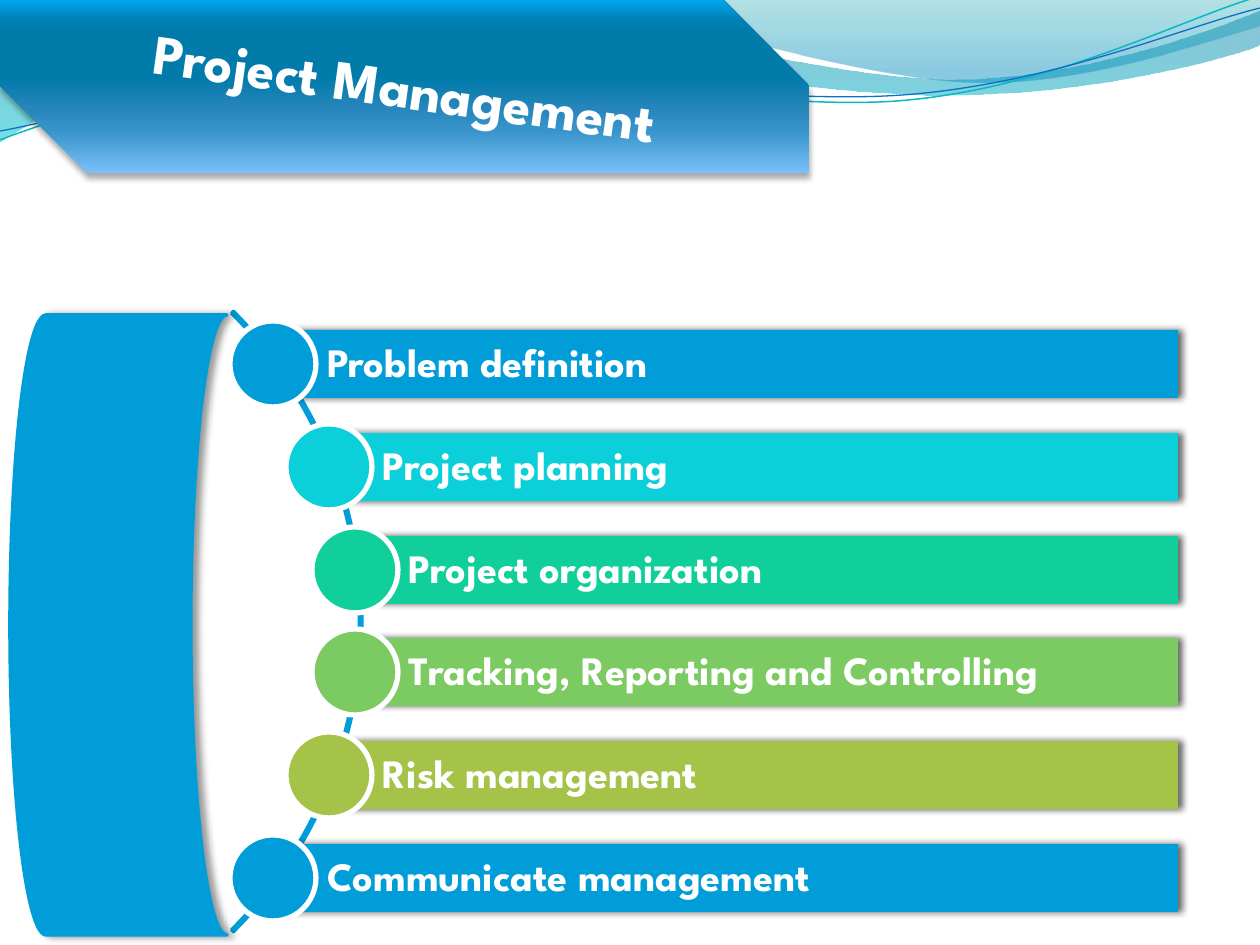
from dataclasses import dataclass
from math import cos, radians, sin

from lxml import etree
from pptx import Presentation
from pptx.dml.color import RGBColor
from pptx.enum.shapes import MSO_SHAPE as SHAPE
from pptx.enum.text import MSO_ANCHOR as ANCHOR, PP_ALIGN as ALIGN
from pptx.oxml.ns import qn
from pptx.util import Pt

PX = 914400 // 126
FONT = "League Spartan"
COLORS = {
    "white": "FFFFFF", "blue": "009DD9", "cyan": "0BD0D9", "green": "10CF9B",
    "leaf": "7CCA62", "olive": "A5C249", "black": "000000",
    "wave_teal": "0AB8BF", "wave_blue": "0F6FC6",
}
BAR_RIGHT, BAR_TOP, BAR_H, CIRCLE = 1178, 330, 68, 86
PITCH = (844 - BAR_TOP) / 5
WAVE_CENTER = (629, 73)


@dataclass(frozen=True)
class Step:
    text: str
    color: str
    x: int


@dataclass(frozen=True)
class Wave:
    start: tuple
    segments: tuple
    stops: tuple = ()
    line: str = ""
    width: float = 0
    tilt: float = 0


@dataclass(frozen=True)
class Shadow:
    alpha: int
    blur: float
    dist: float
    angle: int


STEPS = (
    Step("Problem definition", "blue", 273),
    Step("Project planning", "cyan", 329),
    Step("Project organization", "green", 355),
    Step("Tracking, Reporting and Controlling", "leaf", 355),
    Step("Risk management", "olive", 329),
    Step("Communicate management", "blue", 273),
)
WAVES = (
    Wave((0, 0), (
        (554, -1), (600, 21, 837, 79, 955, 79), (1075, 79, 1207, 33, 1260, 11),
        (1261, 45), (1239, 55, 1096, 96, 940, 95), (784, 95, 481, 35, 324, 43),
        (163, 45, 58, 105, -1, 142), (0, 0)),
        ((0, "0074A1", 45), (100, "00C6CF", 55))),
    Wave((604, -1), (
        (641, 14, 859, 78, 969, 82), (1079, 87, 1211, 40, 1260, 26),
        (1260, 0), (604, -1)),
        ((0, "00A1A9", 30), (80, "008BBF", 45))),
    Wave((0, 140), (
        (60, 117, 199, 72, 349, 66), (498, 59, 747, 112, 898, 101),
        (1050, 89, 1182, 19, 1257, -3)), line="wave_teal", width=0.85, tilt=-2.7),
    Wave((0, 131), (
        (59, 121, 207, 77, 357, 71), (508, 64, 752, 106, 903, 95),
        (1053, 84, 1186, 26, 1260, 8)), line="wave_blue", width=0.75, tilt=-2.7),
)
BANNER_STOPS = (
    (0, "7BC0F9", 100), (25, "3694CA", 100), (38, "2685BA", 100),
    (55, "007BAA", 100), (80, "007AA9", 100), (88, "0080B2", 100),
    (100, "00A7F1", 100),
)


def px(*values: float) -> list[int]:
    return [round(v) * PX for v in values]


def rgb(name: str) -> RGBColor:
    return RGBColor.from_string(COLORS[name])


def apply(target, formats: dict) -> None:
    for name, value in formats.items():
        setattr(target, name, value)


def add_color(parent, value: str, alpha: int) -> None:
    color = etree.SubElement(parent, qn("a:srgbClr"), val=value)
    if alpha < 100:
        etree.SubElement(color, qn("a:alpha"), val=str(alpha * 1000))


def paint(sp, fill: str = "", line: str = "", width: float = 0) -> None:
    sp.shadow.inherit = False
    if fill:
        sp.fill.solid()
        sp.fill.fore_color.rgb = rgb(fill)
    else:
        sp.fill.background()
    if line:
        sp.line.color.rgb = rgb(line)
        sp.line.width = Pt(width)
    else:
        sp.line.fill.background()


def paint_gradient(sp, stops: tuple, angle: int) -> None:
    paint(sp)
    old = sp.element.spPr.find(qn("a:noFill"))
    grad = etree.Element(qn("a:gradFill"), rotWithShape="1")
    stop_list = etree.SubElement(grad, qn("a:gsLst"))
    for pos, value, alpha in stops:
        stop = etree.SubElement(stop_list, qn("a:gs"), pos=str(pos * 1000))
        add_color(stop, value, alpha)
    etree.SubElement(grad, qn("a:lin"), ang=str(angle * 60000), scaled="0")
    sp.element.spPr.replace(old, grad)


def cast_shadow(sp, shadow: Shadow) -> None:
    effects = sp.element.spPr.find(qn("a:effectLst"))
    outer = etree.SubElement(
        effects, qn("a:outerShdw"), blurRad=str(Pt(shadow.blur)),
        dist=str(Pt(shadow.dist)), dir=str(shadow.angle * 60000),
        algn="ctr", rotWithShape="0")
    add_color(outer, COLORS["black"], shadow.alpha)


def write(sp, text: str, size: int, frame: dict, para: dict) -> None:
    tf = sp.text_frame
    apply(tf, {"vertical_anchor": ANCHOR.MIDDLE, "word_wrap": True} | frame)
    p = tf.paragraphs[0]
    apply(p, para)
    r = p.add_run()
    r.text = text
    apply(r.font, {"name": FONT, "size": Pt(size), "bold": True})
    r.font.color.rgb = rgb("white")


def turn(point: tuple, degrees: float) -> tuple:
    cx, cy = WAVE_CENTER
    dx, dy, a = point[0] - cx, point[1] - cy, radians(degrees)
    return cx + dx * cos(a) - dy * sin(a), cy + dx * sin(a) + dy * cos(a)


def bend(sp, segments: tuple) -> None:
    lines = iter(list(sp.element.spPr.iter(qn("a:lnTo"))))
    for seg in segments:
        first = next(lines)
        if len(seg) == 2:
            continue
        curve = etree.Element(qn("a:cubicBezTo"))
        first.addprevious(curve)
        for line in (first, next(lines), next(lines)):
            curve.append(line[0])
            line.getparent().remove(line)


def draw_wave(shapes, wave: Wave) -> None:
    points = [wave.start] + [
        seg[i:i + 2] for seg in wave.segments for i in range(0, len(seg), 2)]
    points = [tuple(v * PX for v in turn(point, -wave.tilt)) for point in points]
    builder = shapes.build_freeform(*points[0])
    builder.add_line_segments(points[1:], close=bool(wave.stops))
    sp = builder.convert_to_shape()
    bend(sp, wave.segments)
    sp.rotation = wave.tilt
    if wave.stops:
        paint_gradient(sp, wave.stops, 90)
    else:
        paint(sp, line=wave.line, width=wave.width)


def draw_step(shapes, step: Step, top: float) -> None:
    bar = shapes.add_shape(
        SHAPE.RECTANGLE, *px(step.x, top, BAR_RIGHT - step.x, BAR_H))
    paint(bar, step.color)
    cast_shadow(bar, Shadow(60, 4, 2, 0))
    frame = dict(zip(
        ("margin_left", "margin_top", "margin_right", "margin_bottom"), px(54, 8, 8, 8)))
    write(bar, step.text, 23, frame, {"alignment": ALIGN.LEFT, "line_spacing": 0.9})
    circle = shapes.add_shape(
        SHAPE.OVAL, *px(step.x - CIRCLE / 2, top + (BAR_H - CIRCLE) / 2, CIRCLE, CIRCLE))
    paint(circle, step.color, "white", 3)


def draw_banner(shapes) -> None:
    sp = shapes.add_shape(SHAPE.SNIP_2_DIAG_RECTANGLE, *px(318, -318, 174, 809))
    sp.rotation = 90
    sp.adjustments[0], sp.adjustments[1] = 0.5, 0
    paint_gradient(sp, BANNER_STOPS, 180)
    cast_shadow(sp, Shadow(32, 3.5, 2.2, 90))
    write(sp, "Project Management", 32, {"word_wrap": False}, {"alignment": ALIGN.CENTER})
    sp.text_frame._txBody.bodyPr.set("rot", str((8 - 90) * 60000))


def main() -> None:
    prs = Presentation()
    prs.slide_width, prs.slide_height = px(1260, 945)
    s = prs.slides.add_slide(prs.slide_layouts[6])
    for wave in WAVES:
        draw_wave(s.shapes, wave)
    arc = s.shapes.add_shape(SHAPE.BLOCK_ARC, *px(-515, 183, 877, 877))
    for i, value in enumerate((189, 27, 0.003)):
        arc.adjustments[i] = value
    paint(arc, line="blue", width=2)
    for i, step in enumerate(STEPS):
        draw_step(s.shapes, step, BAR_TOP + i * PITCH)
    draw_banner(s.shapes)
    drum = s.shapes.add_shape(SHAPE.FLOWCHART_STORED_DATA, *px(10, 315, 217, 620))
    paint(drum, "blue", "blue", 2)
    cast_shadow(drum, Shadow(40, 4, 3, 0))
    prs.save("out.pptx")


if __name__ == "__main__":
    main()
